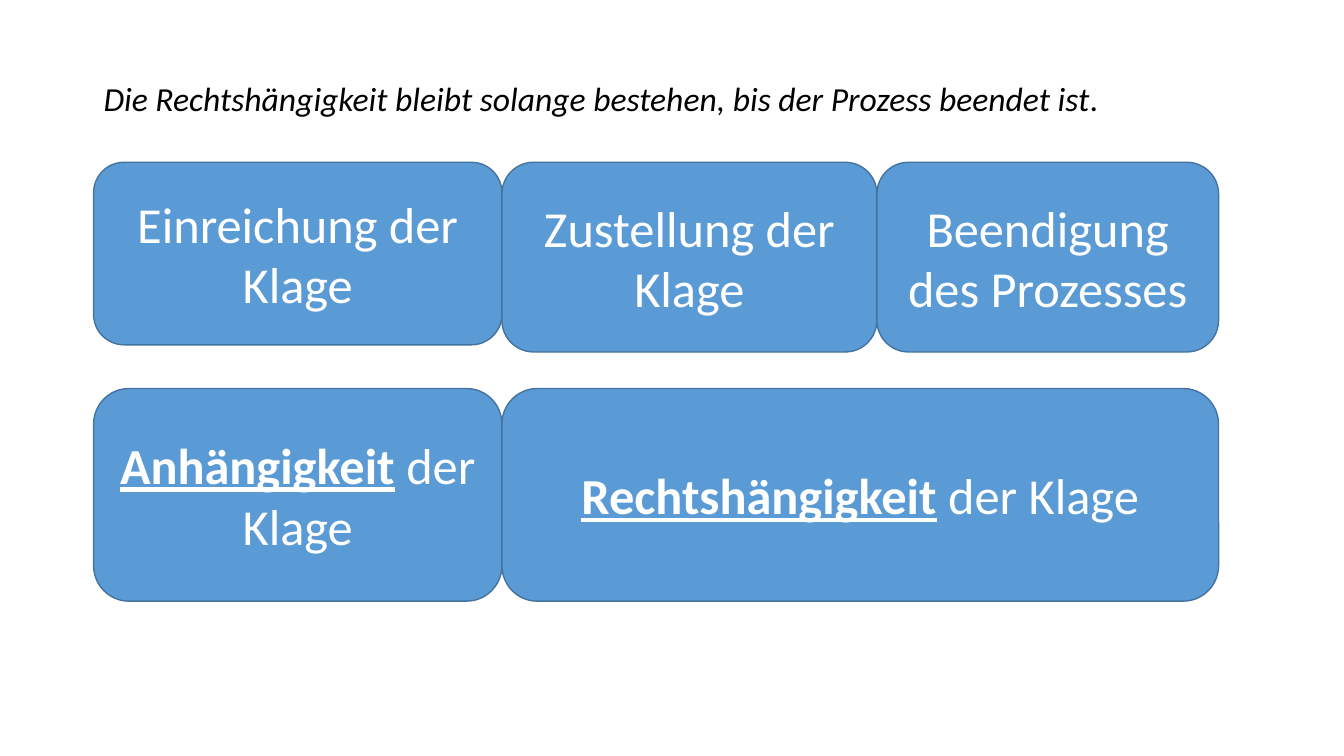
from pptx import Presentation
from pptx.dml.color import RGBColor
from pptx.enum.shapes import MSO_SHAPE as SHAPE
from pptx.enum.text import MSO_ANCHOR as ANCHOR, PP_ALIGN as ALIGN
from pptx.util import Cm, Pt

# Text runs: (text, format that differs from the base)
KEY = {"bold": True, "underline": True}
INTRO = [
    ("Die Rechtshängigkeit bleibt solange bestehen, bis der Prozess beendet ist", {"italic": True}),
    (".", {}),
]
# Rows: top, then boxes as (columns spanned, height, runs)
ROWS = [
    (4.09, [
        (1, 4.6, [("Einreichung der Klage", {})]),
        (1, 4.78, [("Zustellung der Klage", {})]),
        (1, 4.78, [("Beendigung des Prozesses", {})]),
    ]),
    (9.79, [
        (1, 5.36, [("Anhängigkeit", KEY), (" der Klage", {})]),
        (2, 5.36, [("Rechtshängigkeit", KEY), (" der Klage", {})]),
    ]),
]
EDGES = [2.36, 12.65, 22.1, 30.71]  # column borders in cm
FILL, LINE, WHITE, BLACK = "5B9BD5", "43739E", "FFFFFF", "000000"


def color(target, value):
    """Give a fill or font a solid hex colour."""
    if hasattr(target, "solid"):
        target.solid()
        target = target.fore_color
    else:
        target = target.color
    target.rgb = RGBColor.from_string(value)


def add_runs(p, runs, size, value):
    for text, extra in runs:
        r = p.add_run()
        r.text = text
        for name, setting in {"name": "Calibri", "size": Pt(size), **extra}.items():
            setattr(r.font, name, setting)
        color(r.font, value)


def add_box(s, left, top, width, height, runs):
    sp = s.shapes.add_shape(SHAPE.ROUNDED_RECTANGLE, Cm(left), Cm(top), Cm(width), Cm(height))
    sp.shadow.inherit = False
    color(sp.fill, FILL)
    color(sp.line.fill, LINE)
    sp.line.width = Pt(1)
    tf = sp.text_frame
    tf.word_wrap = True
    tf.vertical_anchor = ANCHOR.MIDDLE
    p = tf.paragraphs[0]
    p.alignment = ALIGN.CENTER
    add_runs(p, runs, 36, WHITE)


def main():
    prs = Presentation()
    prs.slide_width, prs.slide_height = Cm(33.87), Cm(19.05)
    s = prs.slides.add_slide(prs.slide_layouts[6])

    tf = s.shapes.add_textbox(Cm(EDGES[0]), Cm(1.95), Cm(29.21), Cm(1.2)).text_frame
    tf.word_wrap = True
    p = tf.paragraphs[0]
    p.line_spacing = 0.9
    add_runs(p, INTRO, 24, BLACK)

    for top, boxes in ROWS:
        col = 0
        for span, height, runs in boxes:
            left, right = EDGES[col], EDGES[col + span]
            add_box(s, left, top, right - left, height, runs)
            col += span

    prs.save("out.pptx")


if __name__ == "__main__":
    main()
